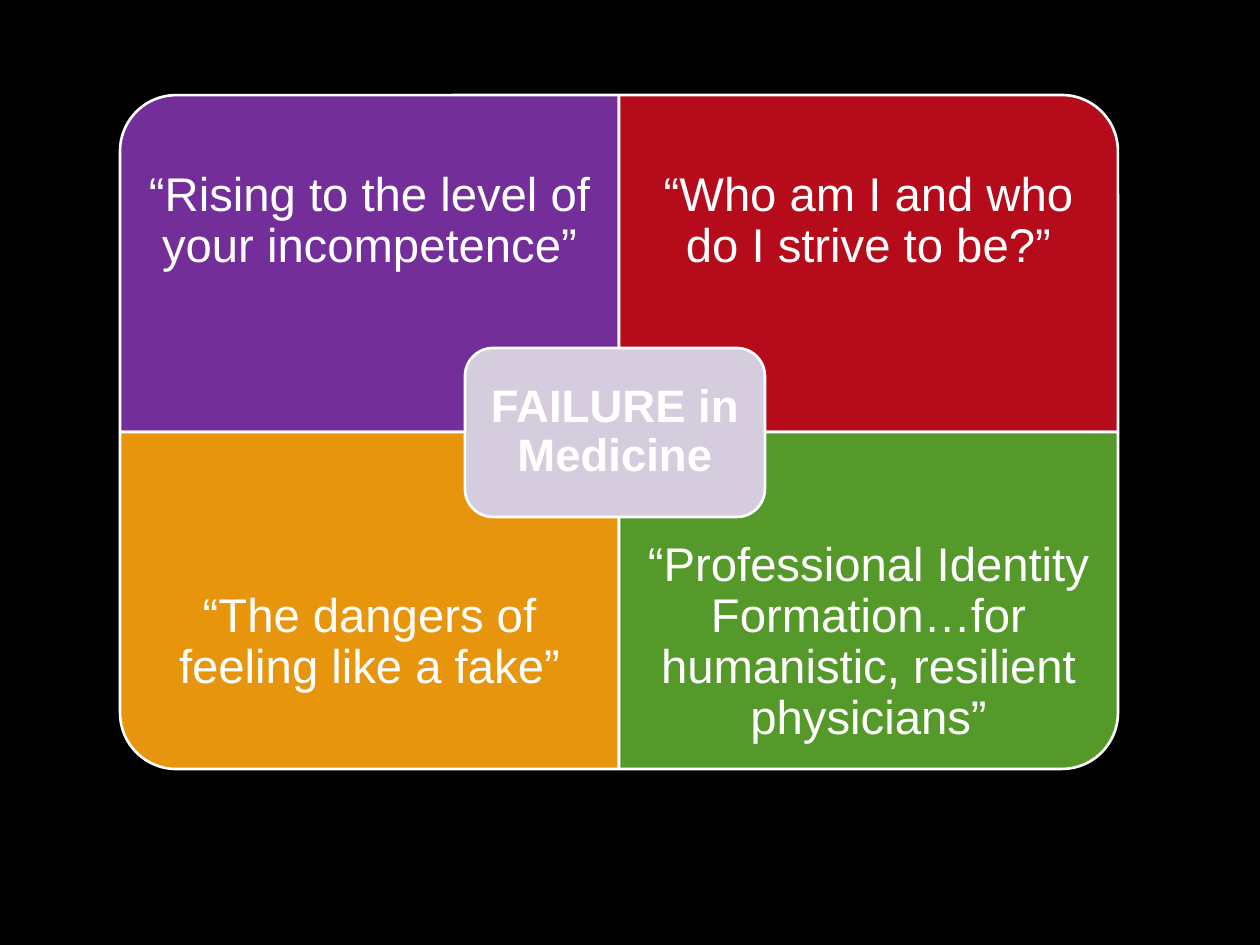
from dataclasses import dataclass

from pptx import Presentation
from pptx.dml.color import RGBColor
from pptx.enum.shapes import MSO_SHAPE
from pptx.enum.text import MSO_ANCHOR, PP_ALIGN
from pptx.util import Emu, Pt

ROUND_ONE = MSO_SHAPE.ROUND_1_RECTANGLE
ROUNDED = MSO_SHAPE.ROUNDED_RECTANGLE
MIDDLE = MSO_ANCHOR.MIDDLE
CENTER = PP_ALIGN.CENTER
BLANK_LAYOUT = 6
EMU_PER_PX = 914400 / 126


@dataclass(frozen=True)
class Theme:
    font: str = "Arial"
    background: str = "000000"
    foreground: str = "FFFFFF"
    center: str = "D5CDDE"
    quadrant_size: int = 27
    center_size: int = 26
    line_width: float = 1.5


THEME = Theme()
LEFT, TOP = 120, 95
WIDTH, HEIGHT = 499, 337
LABEL_HEIGHT = 253
CENTER_WIDTH, CENTER_HEIGHT = 300, 169
CENTER_MARGIN = 8

QUADRANTS = [
    (0, 0, 270, "732E9A", "“Rising to the level of your incompetence”"),
    (0, 1, 0, "B50B1B", "“Who am I and who do I strive to be?”"),
    (1, 0, 180, "E8950E", "“The dangers of feeling like a fake”"),
    (1, 1, 90, "55992B",
     "“Professional Identity Formation…for humanistic, resilient physicians”"),
]


def px(value):
    return Emu(round(value * EMU_PER_PX))


def rgb(color):
    return RGBColor.from_string(color)


def add_panel(shapes, kind, left, top, width, height, color, rotation=0):
    if rotation % 180:
        left, top = left + (width - height) / 2, top + (height - width) / 2
        width, height = height, width
    shape = shapes.add_shape(kind, px(left), px(top), px(width), px(height))
    shape.rotation = rotation
    shape.shadow.inherit = False
    shape.fill.solid()
    shape.fill.fore_color.rgb = rgb(color)
    shape.line.color.rgb = rgb(THEME.foreground)
    shape.line.width = Pt(THEME.line_width)


def add_label(shapes, text, left, top, width, height, size, inset, bold=False):
    box = shapes.add_textbox(px(left), px(top), px(width), px(height))
    frame = box.text_frame
    frame.word_wrap = True
    frame.vertical_anchor = MIDDLE
    frame.margin_left = frame.margin_right = px(inset)
    frame.margin_top = frame.margin_bottom = px(inset)
    paragraph = frame.paragraphs[0]
    paragraph.text = text
    paragraph.alignment = CENTER
    paragraph.line_spacing = 0.9
    paragraph.font.name = THEME.font
    paragraph.font.size = Pt(size)
    paragraph.font.bold = bold
    paragraph.font.color.rgb = rgb(THEME.foreground)


def add_quadrant(shapes, row, column, rotation, color, text):
    left, top = LEFT + column * WIDTH, TOP + row * HEIGHT
    label_top = top + row * (HEIGHT - LABEL_HEIGHT)
    add_panel(shapes, ROUND_ONE, left, top, WIDTH, HEIGHT, color, rotation)
    add_label(shapes, text, left, label_top, WIDTH, LABEL_HEIGHT,
              THEME.quadrant_size, inset=26)


def add_center(shapes, text):
    left, top = 465, TOP + LABEL_HEIGHT
    add_panel(shapes, ROUNDED, left, top, CENTER_WIDTH, CENTER_HEIGHT, THEME.center)
    add_label(shapes, text, left + CENTER_MARGIN, top + CENTER_MARGIN,
              CENTER_WIDTH - 2 * CENTER_MARGIN, CENTER_HEIGHT - 2 * CENTER_MARGIN,
              THEME.center_size, inset=14, bold=True)


def main():
    presentation = Presentation()
    presentation.slide_width, presentation.slide_height = px(1260), px(945)
    slide = presentation.slides.add_slide(presentation.slide_layouts[BLANK_LAYOUT])
    slide.background.fill.solid()
    slide.background.fill.fore_color.rgb = rgb(THEME.background)
    matrix = slide.shapes.add_group_shape()
    for quadrant in QUADRANTS:
        add_quadrant(matrix.shapes, *quadrant)
    add_center(matrix.shapes, "FAILURE in Medicine")
    presentation.save("out.pptx")


if __name__ == "__main__":
    main()
